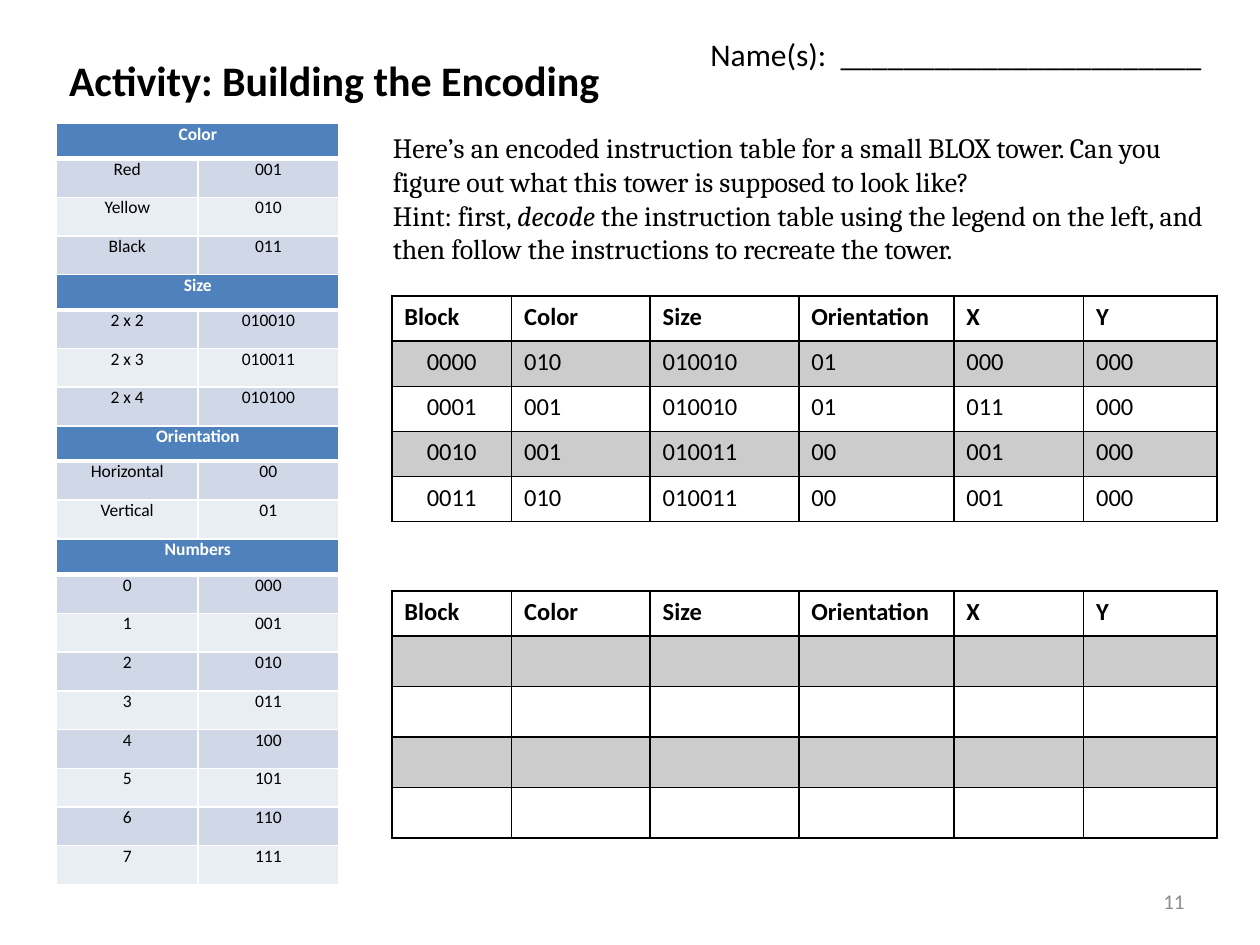
import pptx
import pptx.util
import pptx.dml.color
import pptx.enum.text
import pptx.oxml.ns
import lxml.etree

Inches, Pt = pptx.util.Inches, pptx.util.Pt
RGB = pptx.dml.color.RGBColor.from_string
Align, Anchor = pptx.enum.text.PP_ALIGN, pptx.enum.text.MSO_ANCHOR
qn = pptx.oxml.ns.qn

THEME = {
    "sans": "Calibri", "serif": "Cambria",
    "ink": "000000", "paper": "FFFFFF", "muted": "8C8C8C",
    "header": "4F81BD", "bands": ("D0D8E8", "E9EDF4"), "shade_percent": 20,
    "title": 24, "names": 18, "task": 16, "grid": 14, "page": 12, "legend": 10,
}

TITLE = "Activity: Building the Encoding"
NAMES = "Name(s):  _______________________"
PAGE = "11"
TASK = [
    [("Here’s an encoded instruction table for a small BLOX tower. "
      "Can you figure out what this tower is supposed to look like?", False)],
    [("Hint: first, ", False), ("decode", True),
     (" the instruction table using the legend on the left, "
      "and then follow the instructions to recreate the tower.", False)],
]
LEGENDS = [
    ("Color", 1.2, [("Red", "001"), ("Yellow", "010"), ("Black", "011")]),
    ("Size", 1.2, [("2 x 2", "010010"), ("2 x 3", "010011"), ("2 x 4", "010100")]),
    ("Orientation", 0.9, [("Horizontal", "00"), ("Vertical", "01")]),
    ("Numbers", 2.74, [(str(n), f"{n:03b}") for n in range(8)]),
]
FIELDS = ["Block", "Color", "Size", "Orientation", "X", "Y"]
INSTRUCTIONS = [
    ["0000", "010", "010010", "01", "000", "000"],
    ["0001", "001", "010010", "01", "011", "000"],
    ["0010", "001", "010011", "00", "001", "000"],
    ["0011", "010", "010011", "00", "001", "000"],
]
ANSWERS = [[""] * len(FIELDS) for _ in INSTRUCTIONS]

LEGEND_LEFT, LEGEND_TOP, LEGEND_COLUMNS, LEGEND_HEADER = 0.45, 0.98, [1.12, 1.12], 0.28
GRID_LEFT, GRID_COLUMNS = 3.11, [0.95, 1.1, 1.18, 1.23, 1.03, 1.06]
GRID_HEADER = 1.79 / 5
GRIDS = [(2.35, GRID_HEADER, INSTRUCTIONS), (4.69, 0.4, ANSWERS)]


def style(paragraph, size, color="ink", font="sans", bold=False, align=Align.LEFT):
    paragraph.alignment = align
    paragraph.font.name = THEME[font]
    paragraph.font.size = Pt(THEME[size])
    paragraph.font.bold = bold
    paragraph.font.color.rgb = RGB(THEME[color])


def add_text(slide, place, paragraphs, anchor=Anchor.TOP, **look):
    frame = slide.shapes.add_textbox(*map(Inches, place)).text_frame
    frame.word_wrap = True
    frame.vertical_anchor = anchor
    for index, runs in enumerate(paragraphs):
        paragraph = frame.add_paragraph() if index else frame.paragraphs[0]
        for words, italic in runs:
            run = paragraph.add_run()
            run.text = words
            if italic:
                run.font.italic = True
        style(paragraph, **look)


def add_table(slide, left, top, columns, rows):
    table = slide.shapes.add_table(
        len(rows), len(columns), Inches(left), Inches(top),
        Inches(sum(columns)), Inches(sum(rows))).table
    table.first_row = table.horz_banding = False
    for column, width in zip(table.columns, columns):
        column.width = Inches(width)
    for row, height in zip(table.rows, rows):
        row.height = Inches(height)
    return table


def set_borders(cell, color, bottom=1):
    properties = cell._tc.get_or_add_tcPr()
    for side, width in (("L", 1), ("R", 1), ("T", 1), ("B", bottom)):
        line = lxml.etree.SubElement(properties, qn(f"a:ln{side}"), w=str(Pt(width)))
        fill = lxml.etree.SubElement(line, qn("a:solidFill"))
        lxml.etree.SubElement(fill, qn("a:srgbClr"), val=THEME[color])


def set_fill(cell, color, percent=100):
    cell.fill.solid()
    cell.fill.fore_color.rgb = RGB(color)
    if percent < 100:
        tint = cell._tc.tcPr.find(qn("a:solidFill")).find(qn("a:srgbClr"))
        lxml.etree.SubElement(tint, qn("a:alpha"), val=str(percent * 1000))


def add_legend(slide, top, heading, height, entries):
    row_height = (height - LEGEND_HEADER) / len(entries)
    table = add_table(slide, LEGEND_LEFT, top, LEGEND_COLUMNS,
                      [LEGEND_HEADER] + [row_height] * len(entries))
    table.cell(0, 0).merge(table.cell(0, 1))
    for r, entry in enumerate([(heading, "")] + entries):
        is_header = r == 0
        for c, words in enumerate(entry):
            cell = table.cell(r, c)
            cell.margin_left = cell.margin_right = cell.margin_top = cell.margin_bottom = 0
            set_borders(cell, "paper", bottom=3 if is_header else 1)
            set_fill(cell, THEME["header"] if is_header else THEME["bands"][(r - 1) % 2])
            cell.text = words
            style(cell.text_frame.paragraphs[0], "legend",
                  "paper" if is_header else "ink", bold=is_header, align=Align.CENTER)


def add_grid(slide, top, row_height, body):
    table = add_table(slide, GRID_LEFT, top, GRID_COLUMNS,
                      [GRID_HEADER] + [row_height] * len(body))
    for r, values in enumerate([FIELDS] + body):
        for c, words in enumerate(values):
            cell = table.cell(r, c)
            set_borders(cell, "ink")
            if r % 2:
                set_fill(cell, THEME["ink"], THEME["shade_percent"])
            else:
                cell.fill.background()
            if words:
                cell.text = words
                style(cell.text_frame.paragraphs[0], "grid", bold=r == 0,
                      align=Align.CENTER if r and c == 0 else Align.LEFT)


def main():
    deck = pptx.Presentation()
    deck.slide_width, deck.slide_height = Inches(10), Inches(7.5)
    slide = deck.slides.add_slide(deck.slide_layouts[6])

    add_text(slide, (5.54, 0.23, 4.13, 0.4), [[(NAMES, False)]], size="names")
    add_text(slide, (7.17, 6.95, 2.33, 0.4), [[(PAGE, False)]], Anchor.MIDDLE,
             size="page", color="muted", align=Align.RIGHT)
    top = LEGEND_TOP
    for heading, height, entries in LEGENDS:
        add_legend(slide, top, heading, height, entries)
        top += height
    add_text(slide, (3.02, 0.99, 6.65, 1.72), TASK, size="task", font="serif")
    for grid in GRIDS:
        add_grid(slide, *grid)
    add_text(slide, (0.45, 0.38, 4.46, 0.5), [[(TITLE, False)]], size="title", bold=True)

    deck.save("out.pptx")


if __name__ == "__main__":
    main()
